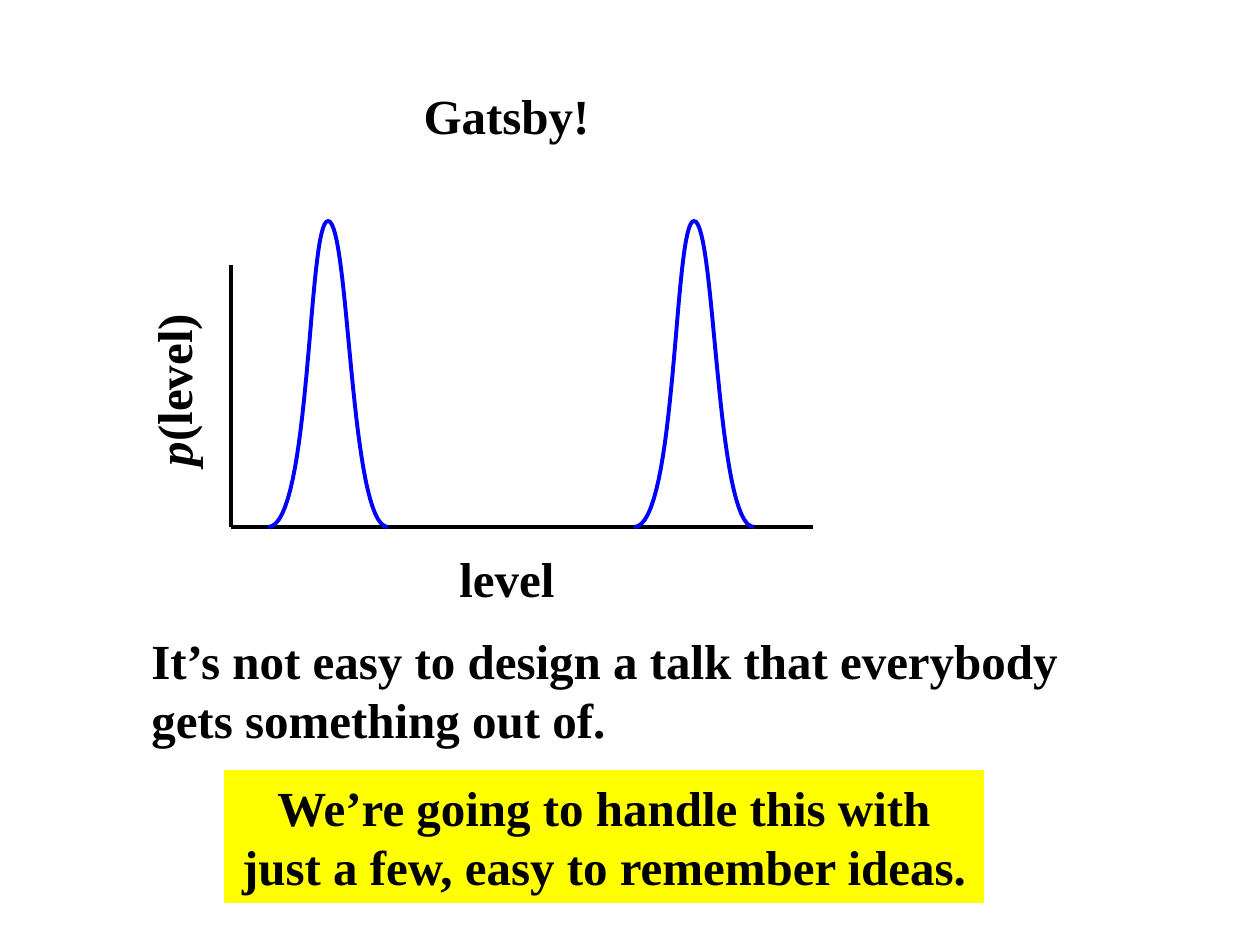
from lxml import etree
from pptx import Presentation
from pptx.dml.color import RGBColor
from pptx.enum.shapes import MSO_CONNECTOR, MSO_SHAPE
from pptx.enum.text import MSO_ANCHOR, MSO_AUTO_SIZE, PP_ALIGN
from pptx.oxml.ns import qn
from pptx.util import Emu, Pt

STRAIGHT = MSO_CONNECTOR.STRAIGHT
RECT = MSO_SHAPE.RECTANGLE
LEFT, CENTER = PP_ALIGN.LEFT, PP_ALIGN.CENTER
TOP = MSO_ANCHOR.TOP
NO_FIT = MSO_AUTO_SIZE.NONE

COLORS = {"ink": "000000", "curve": "0000FF", "callout": "FFFF00", "back": "FFFFFF"}
FONT = "Times New Roman"
PX_PER_INCH = 126
STEPS = 32
BELL = [
    [(1, 1), (0.68, 1), (0.68, 0), (0.5, 0)],
    [(0.5, 0), (0.33, 0), (0.36, 1), (0, 1)],
]


def px(n):
    return Emu(round(n * 914400 / PX_PER_INCH))


def color(name):
    return RGBColor.from_string(COLORS[name])


def set_line(shape, name, width):
    shape.line.color.rgb = color(name)
    shape.line.width = Pt(width)


def write(shape, lines, align=LEFT, wrap=False):
    tf = shape.text_frame
    tf.auto_size = NO_FIT
    tf.word_wrap = wrap
    tf.vertical_anchor = TOP
    for i, runs in enumerate(lines):
        p = tf.add_paragraph() if i else tf.paragraphs[0]
        p.alignment = align
        for text, italic in runs:
            r = p.add_run()
            r.text = text
            r.font.name = FONT
            r.font.size = Pt(28)
            r.font.bold = True
            r.font.italic = italic
            r.font.color.rgb = color("ink")


def add_text(s, box, lines, align=LEFT, wrap=False):
    sp = s.shapes.add_textbox(*map(px, box))
    write(sp, lines, align, wrap)
    return sp


def add_title(s, box, text):
    sp = s.shapes.title
    sp.left, sp.top, sp.width, sp.height = map(px, box)
    write(sp, [[(text, False)]])


def add_axis(s, x1, y1, x2, y2):
    line = s.shapes.add_connector(STRAIGHT, px(x1), px(y1), px(x2), px(y2))
    set_line(line, "ink", 2.25)
    etree.SubElement(line._element.spPr, qn("a:effectLst"))


def bezier(points, t):
    weights = [(1 - t) ** 3, 3 * t * (1 - t) ** 2, 3 * t**2 * (1 - t), t**3]
    return [sum(w * v for w, v in zip(weights, axis)) for axis in zip(*points)]


def add_peak(s, x, y, w, h):
    curve = [bezier(half, i / STEPS) for half in BELL for i in range(STEPS + 1)]
    points = [(px(x + u * w), px(y + v * h)) for u, v in curve]
    builder = s.shapes.build_freeform(*points[0])
    builder.add_line_segments(points[1:], close=False)
    sp = builder.convert_to_shape()
    sp.shadow.inherit = False
    sp.fill.background()
    set_line(sp, "curve", 2.25)


def add_plot(s, x, y, w, h):
    base = y + h
    axis_top = y + 44
    add_axis(s, x, axis_top, x, base)
    add_axis(s, x, base, x + w, base)
    for offset in (37, 403):
        add_peak(s, x + offset, y, 120, h)
    label = add_text(s, (x - 147, y + 132, 179, 72), [[("p", True), ("(level)", False)]])
    label.rotation = 270
    add_text(s, (x + 216, base + 15, 121, 72), [[("level", False)]])


def add_callout(s, box, lines):
    sp = s.shapes.add_shape(RECT, *map(px, box))
    sp.shadow.inherit = False
    sp.fill.solid()
    sp.fill.fore_color.rgb = color("callout")
    set_line(sp, "callout", 0.75)
    write(sp, [[(text, False)] for text in lines], CENTER)


def main():
    prs = Presentation()
    prs.slide_width, prs.slide_height = px(1260), px(945)
    s = prs.slides.add_slide(prs.slide_layouts[5])
    s.background.fill.solid()
    s.background.fill.fore_color.rgb = color("back")
    add_title(s, (411, 79, 193, 72), "Gatsby!")
    add_plot(s, 231, 221, 582, 306)
    sentence = "It’s not easy to design a talk that everybody gets something out of."
    add_text(s, (139, 624, 984, 131), [[(sentence, False)]], wrap=True)
    add_callout(s, (225, 771, 758, 131), [
        "We’re going to handle this with",
        "just a few, easy to remember ideas.",
    ])
    prs.save("out.pptx")


if __name__ == "__main__":
    main()
